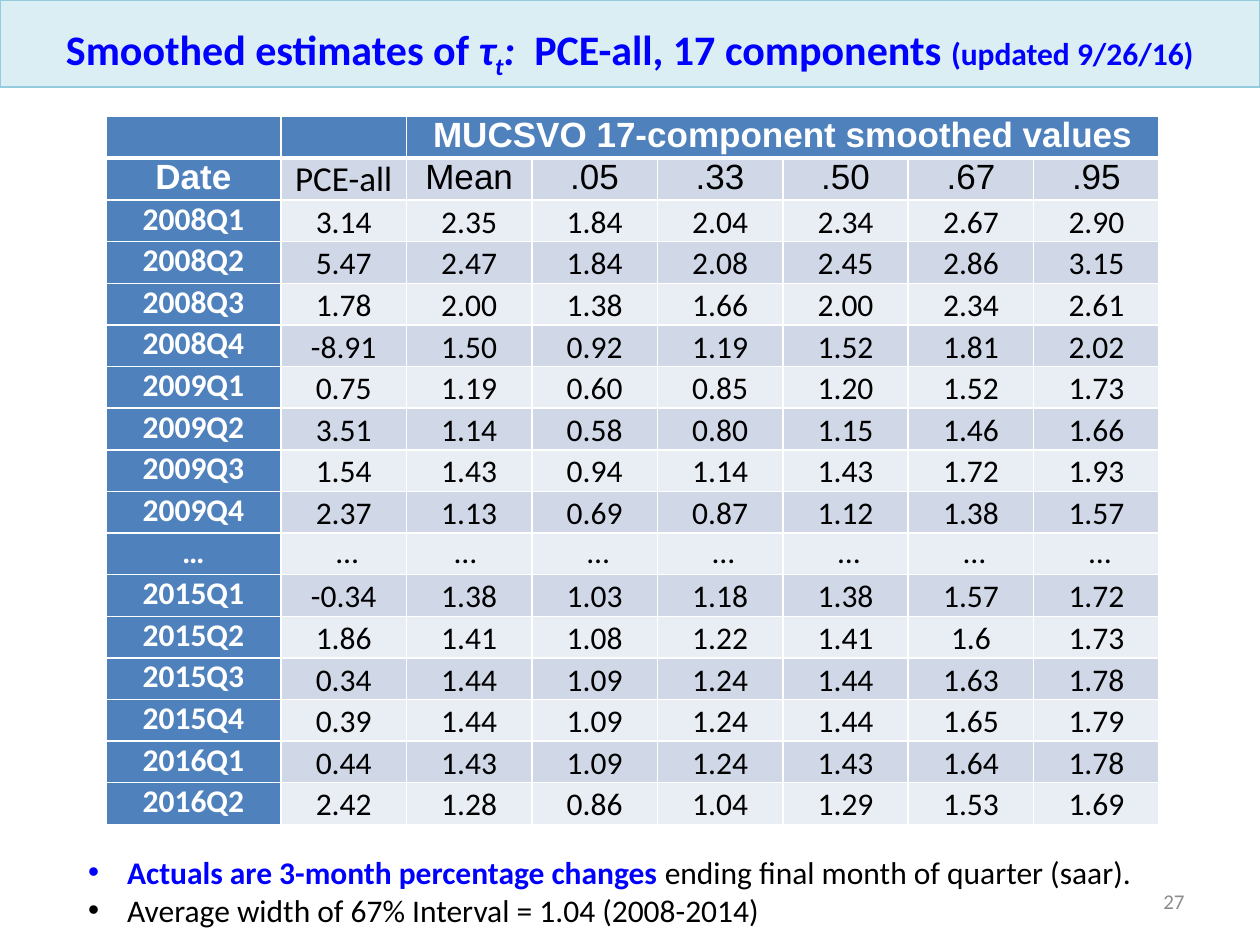
"""Build the slide of smoothed PCE trend estimates."""
import pptx
import pptx.dml.color
import pptx.enum.shapes
import pptx.enum.text
import pptx.oxml
import pptx.oxml.ns
import pptx.util

COLORS = {
    "blue": "0000FF", "black": "000000", "white": "FFFFFF", "grey": "8C8C8C",
    "header": "4F81BD", "dark": "D0D8E8", "light": "E9EDF4",
    "banner": "DBEEF4", "edge": "93CDDD",
}
ALIGN = pptx.enum.text.PP_ALIGN
ANCHOR = pptx.enum.text.MSO_ANCHOR
SPANNER = "MUCSVO 17-component smoothed values"
HEADINGS = ["Date", "PCE-all", "Mean", ".05", ".33", ".50", ".67", ".95"]
ESTIMATES = """2008Q1 3.14 2.35 1.84 2.04 2.34 2.67 2.90
2008Q2 5.47 2.47 1.84 2.08 2.45 2.86 3.15
2008Q3 1.78 2.00 1.38 1.66 2.00 2.34 2.61
2008Q4 -8.91 1.50 0.92 1.19 1.52 1.81 2.02
2009Q1 0.75 1.19 0.60 0.85 1.20 1.52 1.73
2009Q2 3.51 1.14 0.58 0.80 1.15 1.46 1.66
2009Q3 1.54 1.43 0.94 1.14 1.43 1.72 1.93
2009Q4 2.37 1.13 0.69 0.87 1.12 1.38 1.57
… … … … … … … …
2015Q1 -0.34 1.38 1.03 1.18 1.38 1.57 1.72
2015Q2 1.86 1.41 1.08 1.22 1.41 1.6 1.73
2015Q3 0.34 1.44 1.09 1.24 1.44 1.63 1.78
2015Q4 0.39 1.44 1.09 1.24 1.44 1.65 1.79
2016Q1 0.44 1.43 1.09 1.24 1.43 1.64 1.78
2016Q2 2.42 1.28 0.86 1.04 1.29 1.53 1.69"""


class Deck:
    COLS, ROWS = 100, 75

    def __init__(self):
        self.prs = pptx.Presentation()
        self.prs.slide_width = pptx.util.Inches(10)
        self.prs.slide_height = pptx.util.Inches(7.5)
        self.s = self.prs.slides.add_slide(self.prs.slide_layouts[6])

    def x(self, cols):
        return round(self.prs.slide_width * cols / self.COLS)

    def y(self, rows):
        return round(self.prs.slide_height * rows / self.ROWS)

    def box(self, left, top, width, height):
        return self.x(left), self.y(top), self.x(width), self.y(height)

    def rgb(self, name):
        return pptx.dml.color.RGBColor.from_string(COLORS[name])

    def style(self, r, size, color, bold=False, italic=False, font="Calibri", base=0):
        f = r.font
        f.size, f.bold, f.italic, f.name = pptx.util.Pt(size), bold, italic, font
        f.color.rgb = self.rgb(color)
        if base:
            r._r.get_or_add_rPr().set("baseline", str(base * 1000))

    def runs(self, p, parts, align=ALIGN.LEFT):
        p.alignment = align
        for text, look in parts:
            r = p.add_run()
            r.text = text
            self.style(r, **look)

    def banner(self, parts, *place):
        rect = pptx.enum.shapes.MSO_SHAPE.RECTANGLE
        sp = self.s.shapes.add_shape(rect, *self.box(*place))
        sp.shadow.inherit = False
        sp.fill.solid()
        sp.fill.fore_color.rgb = self.rgb("banner")
        sp.line.color.rgb = self.rgb("edge")
        sp.line.width = 0
        sp.text_frame.vertical_anchor = ANCHOR.BOTTOM
        self.runs(sp.text_frame.paragraphs[0], parts, ALIGN.CENTER)

    def text(self, parts, *place, align=ALIGN.LEFT):
        tf = self.s.shapes.add_textbox(*self.box(*place)).text_frame
        tf.word_wrap = True
        tf.vertical_anchor = ANCHOR.MIDDLE
        self.runs(tf.paragraphs[0], parts, align)

    def bullets(self, items, *place, indent=3.1):
        tf = self.s.shapes.add_textbox(*self.box(*place)).text_frame
        tf.word_wrap = False
        tf.auto_size = pptx.enum.text.MSO_AUTO_SIZE.SHAPE_TO_FIT_TEXT
        ns = pptx.oxml.ns.nsdecls("a")
        for i, parts in enumerate(items):
            p = tf.add_paragraph() if i else tf.paragraphs[0]
            self.runs(p, parts)
            pPr = p._p.get_or_add_pPr()
            pPr.set("marL", str(self.x(indent)))
            pPr.set("indent", str(-self.x(indent)))
            for tag in ('buFont typeface="Arial"', 'buChar char="•"'):
                pPr.append(pptx.oxml.parse_xml(f"<a:{tag} {ns}/>"))

    def borders(self, cell, top=1, bottom=1):
        tcPr = cell._tc.get_or_add_tcPr()
        ns = pptx.oxml.ns.nsdecls("a")
        for i, (side, pt) in enumerate(zip("LRTB", (1, 1, top, bottom))):
            tcPr.insert(i, pptx.oxml.parse_xml(
                f'<a:ln{side} {ns} w="{pptx.util.Pt(pt)}"><a:solidFill>'
                f'<a:srgbClr val="{COLORS["white"]}"/></a:solidFill></a:ln{side}>'))

    def cell(self, cell, text, fill, look, side=0.7, top=0, low=False):
        cell.margin_left = cell.margin_right = self.x(side)
        cell.margin_top, cell.margin_bottom = self.y(top), 0
        cell.vertical_anchor = ANCHOR.BOTTOM if low else ANCHOR.TOP
        cell.fill.solid()
        cell.fill.fore_color.rgb = self.rgb(fill)
        p = cell.text_frame.paragraphs[0]
        p.text = text
        p.alignment = ALIGN.CENTER
        for r in p.runs:
            self.style(r, **look)

    def table(self, rows, widths, *place):
        shape = self.s.shapes.add_table(len(rows), len(widths), *self.box(*place))
        tbl = shape.table
        for column, width in zip(tbl.columns, widths):
            column.width = self.x(width)
        for i, values in enumerate(rows):
            tbl.rows[i].height = self.y(place[3] / len(rows))
            for j, value in enumerate(values):
                head = i == 0 or j == 0
                look = {"size": 20 if i < 2 else 18, "bold": head,
                        "color": "white" if head else "black",
                        "font": "Arial" if i < 2 and value != "PCE-all" else "Calibri"}
                fill = "header" if head else "dark" if i % 2 else "light"
                number = i > 1 and j > 0 and "…" not in value
                inset = {"side": 0.1, "top": 0.1, "low": True} if number else {}
                self.cell(tbl.cell(i, j), value, fill, look, **inset)
                self.borders(tbl.cell(i, j), 3 if i == 1 else 1, 3 if i == 0 else 1)
        tbl.cell(0, 2).merge(tbl.cell(0, len(widths) - 1))


def estimate_rows():
    rows = [["", "", SPANNER] + [""] * 5, HEADINGS]
    for line in ESTIMATES.splitlines():
        date, *values = line.split(" ")
        if date == "…":
            values = ["… " if j == 1 else " …" for j in range(len(values))]
        rows.append([date, *values])
    return rows


def main():
    deck = Deck()
    title = {"size": 24, "color": "blue", "bold": True}
    body = {"size": 18, "color": "black"}
    strong = {"size": 18, "color": "blue", "bold": True}
    deck.text([("27", {"size": 12, "color": "grey"})], 71.7, 69.5, 23.3, 4, align=ALIGN.RIGHT)
    deck.banner([("Smoothed estimates of ", title),
                 ("τ", {**title, "italic": True}),
                 ("t", {**title, "italic": True, "base": -25}),
                 (":", {**title, "italic": True}),
                 ("  PCE-all, 17 components ", title),
                 ("(updated 9/26/16)", strong)], 0, 0, 100, 6.9)
    deck.bullets([[("Actuals are 3-month percentage changes ", strong),
                   ("ending final month of quarter (saar).", body)],
                  [("Average width of 67% Interval = 1.04 (2008-2014)", body)]],
                 6, 67.2, 86.8, 7.1)
    deck.table(estimate_rows(), [13.9] + [9.96] * 7, 8.4, 9.2, 83.6, 56.2)
    deck.prs.save("out.pptx")


if __name__ == "__main__":
    main()
